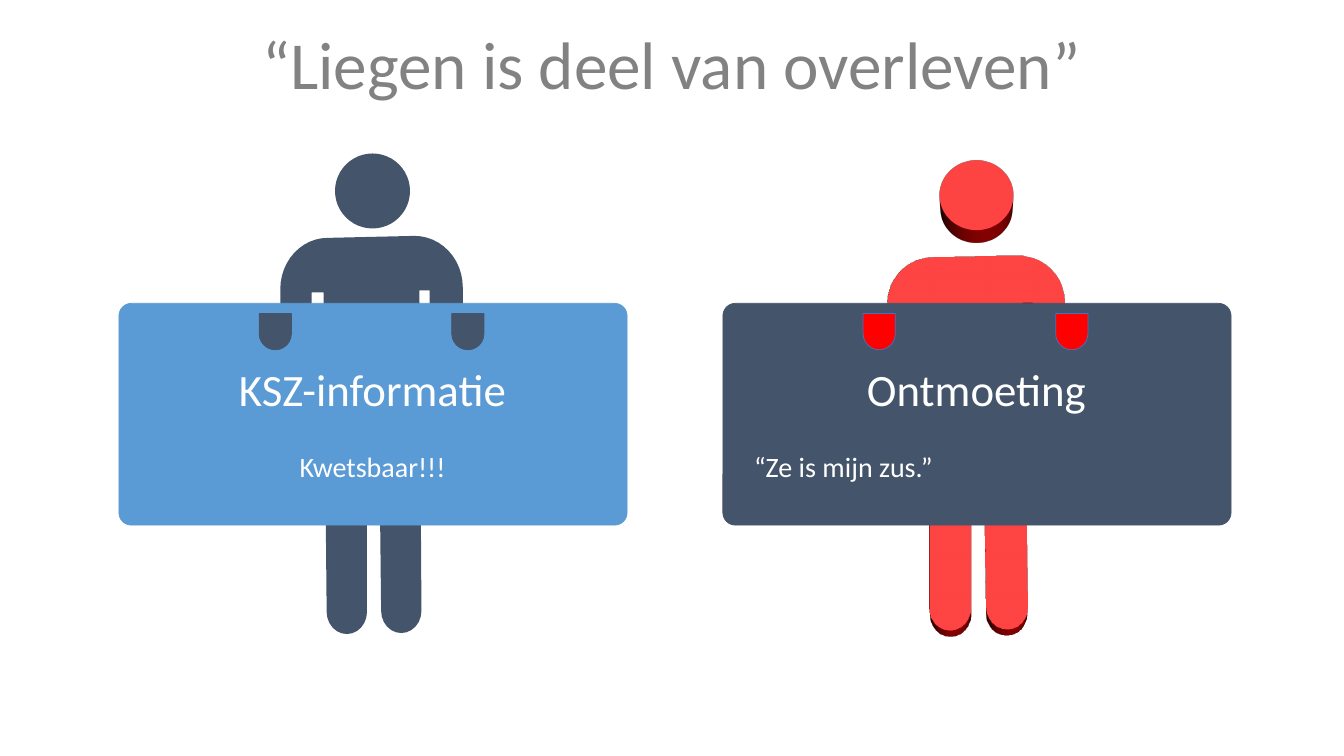
import math

import pptx
import pptx.dml.color
import pptx.enum.shapes
import pptx.enum.text
import pptx.oxml
import pptx.oxml.ns
import pptx.util

SHAPE = pptx.enum.shapes.MSO_SHAPE
ALIGN = pptx.enum.text.PP_ALIGN
ANCHOR = pptx.enum.text.MSO_ANCHOR
Inches = pptx.util.Inches

TITLE = "“Liegen is deel van overleven”"
PEOPLE = [
    {"heading": "KSZ-informatie", "remark": "Kwetsbaar!!!", "align": ALIGN.CENTER,
     "board": "blue", "person": "slate", "hand_line": "slate",
     "head_top": 1.53, "solid": False},
    {"heading": "Ontmoeting", "remark": "“Ze is mijn zus.”", "align": ALIGN.LEFT,
     "board": "slate", "person": "red", "hand_line": "indigo",
     "head_top": 1.57, "solid": True},
]
THEME = {
    "font": "Calibri",
    "colors": {"title": "828282", "slate": "44546A", "blue": "5B9BD5",
               "red": "FF0000", "indigo": "4472C4", "white": "FFFFFF"},
    "sizes": {"title": 48, "heading": 32, "remark": 20},
}

# Each person stands in a column as wide as the pitch; offsets count from the board.
FIRST_LEFT, PITCH = 1.18, 5.99
BOARD_TOP, BOARD_WIDTH, BOARD_HEIGHT = 3.01, 5.04, 2.2
BODY_OFFSET, BODY_TOP = 1.6, 2.34
HEAD_OFFSET, HEAD_SIZE = 2.15, 0.73
HAND_OFFSETS, HAND_TOP, HAND_SIZE = (3.3, 1.39), 3.11, (0.32, 0.36)
TEXT_OFFSET, TEXT_TOP, TEXT_SIZE = 0.21, 3.54, (4.61, 1.31)
DEPTH = {"body": 0.27, "head": 0.4}

# Corners are (x, y); arcs are (centre x, centre y, radius x, radius y, from, to).
BODY = [
    (1.33, 0.51, 0.48, 0.51, -90, 0),
    (1.66, 1.71, 0.16, 0.17, 0, 180),
    (1.48, 0.54), (1.38, 0.54),
    (1.2, 3.72, 0.2, 0.22, 0, 180),
    (0.98, 1.88), (0.86, 1.88),
    (0.66, 3.73, 0.2, 0.22, 0, 180),
    (0.43, 0.56), (0.31, 0.56),
    (0.16, 1.73, 0.15, 0.18, 0, 180),
    (0.47, 0.53, 0.47, 0.51, 180, 270),
]


def color(name):
    return pptx.dml.color.RGBColor.from_string(THEME["colors"][name])


def paint(shape, fill, line=None, width=0.5):
    shape.shadow.inherit = False
    shape.fill.solid()
    shape.fill.fore_color.rgb = color(fill)
    if line:
        shape.line.color.rgb = color(line)
        shape.line.width = pptx.util.Pt(width)
    else:
        shape.line.fill.background()


def add_shape(page, kind, left, top, width, height):
    return page.shapes.add_shape(kind, *map(Inches, (left, top, width, height)))


def style(para, role, ink, align):
    para.alignment = align
    for span in para.runs:
        span.font.name = THEME["font"]
        span.font.size = pptx.util.Pt(THEME["sizes"][role])
        span.font.color.rgb = color(ink)


def extrude(shape, depth):
    """Give the shape depth, seen in perspective from above."""
    namespace = pptx.oxml.ns.nsdecls("a")
    for xml in (
        f'<a:scene3d {namespace}><a:camera prst="perspectiveAbove"/>'
        '<a:lightRig rig="threePt" dir="t"/></a:scene3d>',
        f'<a:sp3d {namespace} extrusionH="{Inches(depth)}"/>',
    ):
        shape._element.spPr.append(pptx.oxml.parse_xml(xml))


def outline_points(outline, steps=12):
    for part in outline:
        if len(part) == 2:
            yield part
            continue
        x, y, radius_x, radius_y, start, end = part
        for step in range(steps + 1):
            angle = math.radians(start + (end - start) * step / steps)
            yield x + radius_x * math.cos(angle), y + radius_y * math.sin(angle)


def add_body(page, left):
    points = [(Inches(left + x), Inches(BODY_TOP + y)) for x, y in outline_points(BODY)]
    builder = page.shapes.build_freeform(*points[0])
    builder.add_line_segments(points[1:], close=True)
    return builder.convert_to_shape()


def add_person(page, left, person):
    body = add_body(page, left + BODY_OFFSET)
    head = add_shape(page, SHAPE.OVAL, left + HEAD_OFFSET, person["head_top"],
                     HEAD_SIZE, HEAD_SIZE)
    paint(body, person["person"])
    paint(head, person["person"], None if person["solid"] else person["person"], 1)
    if person["solid"]:
        extrude(body, DEPTH["body"])
        extrude(head, DEPTH["head"])

    board = add_shape(page, SHAPE.ROUNDED_RECTANGLE, left, BOARD_TOP,
                      BOARD_WIDTH, BOARD_HEIGHT)
    board.adjustments[0] = 0.056
    paint(board, person["board"], person["board"])

    for offset in HAND_OFFSETS:
        hand = add_shape(page, SHAPE.ROUND_2_SAME_RECTANGLE, left + offset,
                         HAND_TOP, *HAND_SIZE)
        hand.adjustments[0] = 0.5
        hand.rotation = 180
        paint(hand, person["person"], person["hand_line"])


def add_message(page, left, person):
    box = page.shapes.add_textbox(
        *map(Inches, (left + TEXT_OFFSET, TEXT_TOP, *TEXT_SIZE)))
    frame = box.text_frame
    frame.word_wrap = True
    frame.text = person["heading"]
    style(frame.paragraphs[0], "heading", "white", ALIGN.CENTER)
    remark = frame.add_paragraph()
    remark.text = person["remark"]
    remark.space_before = pptx.util.Pt(24)
    style(remark, "remark", "white", person["align"])


def add_title(page):
    title = page.shapes.title
    title.left, title.top, title.width, title.height = map(
        Inches, (0.79, 0.17, 11.74, 0.91))
    frame = title.text_frame
    frame.text = TITLE
    frame.vertical_anchor = ANCHOR.MIDDLE
    frame.auto_size = pptx.enum.text.MSO_AUTO_SIZE.NONE
    style(frame.paragraphs[0], "title", "title", ALIGN.CENTER)


def main():
    deck = pptx.Presentation()
    deck.slide_width, deck.slide_height = Inches(13.33), Inches(7.5)
    page = deck.slides.add_slide(deck.slide_layouts.get_by_name("Title Only"))
    add_title(page)
    for column, person in enumerate(PEOPLE):
        left = FIRST_LEFT + column * PITCH
        add_person(page, left, person)
        add_message(page, left, person)
    deck.save("out.pptx")


if __name__ == "__main__":
    main()
